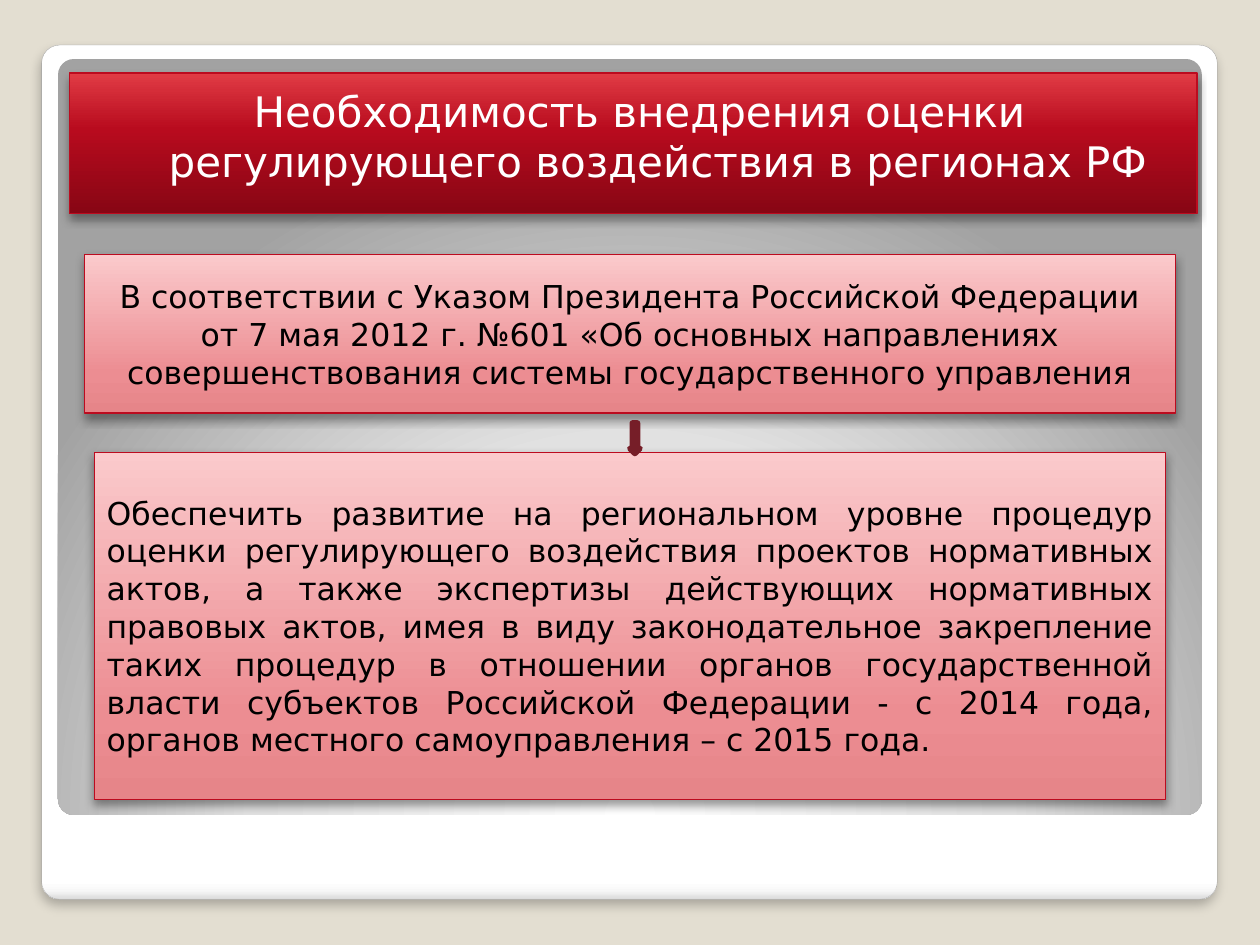
from lxml import etree
from pptx import Presentation
from pptx.dml.color import RGBColor as RGB
from pptx.enum.shapes import MSO_SHAPE as SHAPE
from pptx.enum.text import MSO_ANCHOR as ANCHOR, MSO_AUTO_SIZE as AUTO, PP_ALIGN as ALIGN
from pptx.oxml import parse_xml
from pptx.oxml.ns import nsdecls, qn
from pptx.util import Cm, Pt

COLORS = {
    "background": "E3DED1", "frame_line": "A4A4A4", "box_line": "BC0B1F",
    "arrow": "9F2936", "arrow_line": "761E28",
    "light": "FFFFFF", "dark": "000000",
}
FRAME = [(0, "FFFFFF"), (98, "FFFFFF"), (99, "F7F7F7"), (100, "DADADA")]
PANEL = [(0, "FFFFFF"), (55, "E1E1E1"), (100, "A2A2A2")]
RED = [(0, "870614"), (60, "B80B1E"), (100, "E13C45")]
PINK = [(0, "E68589"), (25, "EC8D92"), (100, "FBCACC")]
RADIAL = '<a:path path="circle"><a:fillToRect l="50000" t="175000" r="50000" b="-75000"/></a:path>'

TITLE = "Необходимость внедрения оценки регулирующего воздействия в регионах РФ"
DECREE = (
    "В соответствии с Указом Президента Российской Федерации от 7 мая 2012 г. №601 "
    "«Об основных направлениях совершенствования системы государственного управления"
)
TASK = (
    "Обеспечить развитие на региональном уровне процедур оценки регулирующего воздействия "
    "проектов нормативных актов, а также экспертизы действующих нормативных правовых актов, "
    "имея в виду законодательное закрепление таких процедур в отношении органов "
    "государственной власти субъектов Российской Федерации - с 2014 года, "
    "органов местного самоуправления – с 2015 года."
)


def color(name):
    return RGB.from_string(COLORS[name])


def linear(angle):
    return f'<a:lin ang="{angle * 60000}" scaled="0"/>'


class SlideBuilder:
    font = "DejaVu Sans"

    def __init__(self, prs):
        self.s = prs.slides.add_slide(prs.slide_layouts[5])
        fill = self.s.background.fill
        fill.solid()
        fill.fore_color.rgb = color("background")

    def shape(self, kind, at, radius=None):
        sp = self.s.shapes.add_shape(kind, *map(Cm, at))
        sp.shadow.inherit = False
        if radius:
            sp.adjustments[0] = radius
        return sp

    def gradient(self, sp, stops, direction):
        sp.fill.gradient()
        old = sp.fill._xPr.find(qn("a:gradFill"))
        gs = "".join(
            f'<a:gs pos="{pos * 1000}"><a:srgbClr val="{c}"/></a:gs>' for pos, c in stops
        )
        new = parse_xml(
            f'<a:gradFill {nsdecls("a")} rotWithShape="1"><a:gsLst>{gs}</a:gsLst>{direction}</a:gradFill>'
        )
        old.getparent().replace(old, new)

    def line(self, sp, name, width):
        sp.line.color.rgb = color(name)
        sp.line.width = Pt(width)

    def shadow(self, sp, alpha, blur, dist):
        sp.shadow.inherit = False
        effects = sp.element.spPr.find(qn("a:effectLst"))
        outer = etree.SubElement(
            effects, qn("a:outerShdw"), blurRad=str(Pt(blur)), dist=str(Pt(dist)),
            dir="5400000", algn="t", rotWithShape="0",
        )
        clr = etree.SubElement(outer, qn("a:srgbClr"), val=COLORS["dark"])
        etree.SubElement(clr, qn("a:alpha"), val=str(alpha * 1000))

    def text(self, sp, words, size, name, align, frame):
        tf = sp.text_frame
        for key, value in {"word_wrap": True, "auto_size": AUTO.NONE, **frame}.items():
            setattr(tf, key, value)
        p = tf.paragraphs[0]
        p.alignment = align
        r = p.add_run()
        r.text = words
        for key, value in {"name": self.font, "size": Pt(size)}.items():
            setattr(r.font, key, value)
        r.font.color.rgb = color(name)
        return p

    def red_box(self, sp, stops):
        self.gradient(sp, stops, linear(270))
        self.line(sp, "box_line", 0.75)
        self.shadow(sp, 40, 5.2, 3)

    def frame(self, at):
        sp = self.shape(SHAPE.ROUNDED_RECTANGLE, at, 0.021)
        self.gradient(sp, FRAME, linear(90))
        self.line(sp, "frame_line", 0.16)
        self.shadow(sp, 25, 6, 4)

    def panel(self, at):
        sp = self.shape(SHAPE.ROUNDED_RECTANGLE, at, 0.021)
        self.gradient(sp, PANEL, RADIAL)
        sp.line.fill.background()

    def title(self, at, words):
        sp = self.s.shapes.title
        for key, value in zip(("left", "top", "width", "height"), at):
            setattr(sp, key, Cm(value))
        self.s.shapes._spTree.append(sp.element)
        self.red_box(sp, RED)
        p = self.text(sp, words, 24, "light", ALIGN.CENTER, {
            "vertical_anchor": ANCHOR.TOP,
            "margin_left": Cm(0.51), "margin_top": Cm(0.25),
            "margin_right": Cm(0.25), "margin_bottom": Cm(0.13),
        })
        p.space_before = Pt(2.5)
        pPr = p._p.get_or_add_pPr()
        pPr.set("marL", str(Cm(0.74)))
        pPr.set("indent", str(-Cm(0.74)))

    def box(self, at, words, align):
        sp = self.shape(SHAPE.RECTANGLE, at)
        self.red_box(sp, PINK)
        self.text(sp, words, 18, "dark", align, {"vertical_anchor": ANCHOR.MIDDLE})

    def arrow(self, at):
        sp = self.shape(SHAPE.DOWN_ARROW, at)
        sp.fill.solid()
        sp.fill.fore_color.rgb = color("arrow")
        self.line(sp, "arrow_line", 3.35)


def main():
    prs = Presentation()
    prs.slide_width, prs.slide_height = Cm(25.4), Cm(19.05)
    b = SlideBuilder(prs)
    b.frame((0.84, 0.91, 23.7, 17.22))
    b.panel((1.17, 1.19, 23.06, 15.24))
    b.title((1.4, 1.47, 22.73, 2.84), TITLE)
    b.box((1.7, 5.13, 22, 3.2), DECREE, ALIGN.CENTER)
    b.box((1.9, 9.12, 21.6, 7), TASK, ALIGN.JUSTIFY)
    b.arrow((12.7, 8.53, 0.2, 0.61))
    prs.save("out.pptx")


if __name__ == "__main__":
    main()
